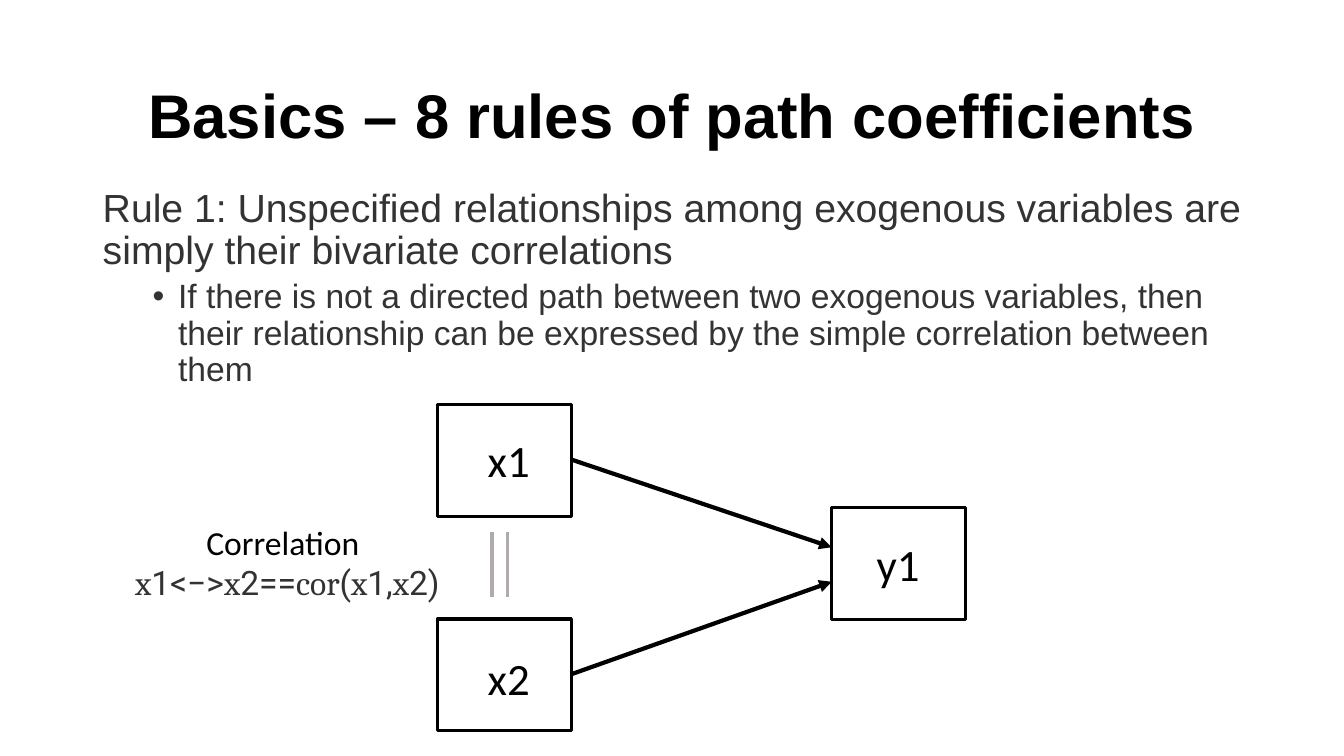
from lxml import etree
from pptx import Presentation
from pptx.dml.color import RGBColor
from pptx.enum.shapes import MSO_CONNECTOR, MSO_SHAPE
from pptx.enum.text import MSO_ANCHOR, MSO_AUTO_SIZE, PP_ALIGN
from pptx.oxml.ns import qn
from pptx.util import Cm, Pt

RECTANGLE = MSO_SHAPE.RECTANGLE
STRAIGHT = MSO_CONNECTOR.STRAIGHT
CENTER = PP_ALIGN.CENTER
LEFT = PP_ALIGN.LEFT
MIDDLE = MSO_ANCHOR.MIDDLE
TOP = MSO_ANCHOR.TOP

COLORS = {"black": "000000", "text": "333333", "gray": "AFABAB"}

NODE_WIDTH, NODE_HEIGHT = 3.38, 2.82
CAUSE_LEFT, EFFECT_LEFT = 11.02, 20.96
# Name, box left and top, label left and top
NODES = [
    ("x1", CAUSE_LEFT, 10.19, 12.04, 10.77),
    ("x2", CAUSE_LEFT, 15.6, 12.04, 16.28),
    ("y1", EFFECT_LEFT, 12.8, 21.84, 13.41),
]
ARROW_HEIGHTS = [(11.58, 13.79), (16.99, 14.66)]
FORMULA = [
    (" ", "Arial"), ("x", "Cambria"), ("1<−>", "Roboto"),
    ("x", "Cambria"), ("2==", "Roboto"), ("cor", "Cambria"),
    ("(", "Roboto"), ("x", "Cambria"), ("1,", "Roboto"),
    ("x", "Cambria"), ("2)", "Roboto"),
]


def color(name):
    return RGBColor.from_string(COLORS[name])


def add_box(page, left, top, width, height, anchor=TOP, wrap=True):
    box = page.shapes.add_textbox(Cm(left), Cm(top), Cm(width), Cm(height))
    frame = box.text_frame
    frame.word_wrap = wrap
    frame.auto_size = MSO_AUTO_SIZE.NONE
    frame.vertical_anchor = anchor
    return frame


def add_text(frame, spans, size, font="Arial", fill="black", bold=False,
             align=LEFT, spacing=1.0, before=0):
    """Write one paragraph; spans is a string or (text, font) pairs."""
    para = frame.paragraphs[0]
    if para.runs:
        para = frame.add_paragraph()
    para.alignment = align
    para.line_spacing = spacing
    para.space_before = Pt(before)
    if isinstance(spans, str):
        spans = [(spans, font)]
    for text, name in spans:
        span = para.add_run()
        span.text = text
        span.font.name = name
        span.font.size = Pt(size)
        span.font.bold = bold
        span.font.color.rgb = color(fill)
    return para


def add_bullet(para, margin, indent):
    para.level = 1
    properties = para._p.get_or_add_pPr()
    properties.set("marL", str(Cm(margin)))
    properties.set("indent", str(Cm(indent)))
    etree.SubElement(properties, qn("a:buFont"), typeface="Arial")
    etree.SubElement(properties, qn("a:buChar"), char="•")


def add_node(page, name, left, top, label_left, label_top):
    node = page.shapes.add_shape(RECTANGLE, Cm(left), Cm(top),
                                 Cm(NODE_WIDTH), Cm(NODE_HEIGHT))
    node.shadow.inherit = False
    node.fill.background()
    node.line.color.rgb = color("black")
    node.line.width = Pt(2.25)
    label = add_box(page, label_left, label_top, 1.58, 1.62, wrap=False)
    add_text(label, name, 32, font="Calibri")


def add_line(page, start, end, fill, width, arrow=False):
    line = page.shapes.add_connector(STRAIGHT, Cm(start[0]), Cm(start[1]),
                                     Cm(end[0]), Cm(end[1]))
    line.line.color.rgb = color(fill)
    line.line.width = Pt(width)
    if arrow:
        etree.SubElement(line.line._get_or_add_ln(), qn("a:tailEnd"),
                         type="triangle")
    etree.SubElement(line._element.spPr, qn("a:effectLst"))


def main():
    deck = Presentation()
    deck.slide_width, deck.slide_height = Cm(33.87), Cm(19.05)
    page = deck.slides.add_slide(deck.slide_layouts[6])

    # Title
    title = add_box(page, 1.17, 1.14, 31.55, 3.68, anchor=MIDDLE)
    add_text(title, "Basics – 8 rules of path coefficients", 44, bold=True,
             align=CENTER, spacing=0.9)

    # Rule and explanation
    rule = add_box(page, 2.34, 4.62, 29.21, 5.44)
    add_text(rule, "Rule 1: Unspecified relationships among exogenous "
             "variables are simply their bivariate correlations",
             28, fill="text", spacing=0.9, before=10)
    detail = add_text(rule, "If there is not a directed path between two "
                      "exogenous variables, then their relationship can be "
                      "expressed by the simple correlation between them",
                      24, fill="text", spacing=0.9, before=5)
    add_bullet(detail, 1.9, -0.64)

    # Path diagram
    for node in NODES:
        add_node(page, *node)
    for start, end in ARROW_HEIGHTS:
        add_line(page, (CAUSE_LEFT + NODE_WIDTH, start), (EFFECT_LEFT, end),
                 "black", 3, arrow=True)

    # Correlation mark and caption
    for left in (12.4, 12.78):
        add_line(page, (left, 13.41), (left, 15.04), "gray", 2.25)
    caption = add_box(page, 2.06, 13.03, 10.13, 2.31)
    add_text(caption, "Correlation", 24, font="Calibri", align=CENTER)
    add_text(caption, FORMULA, 24, fill="text", align=CENTER)

    deck.save("out.pptx")


if __name__ == "__main__":
    main()
